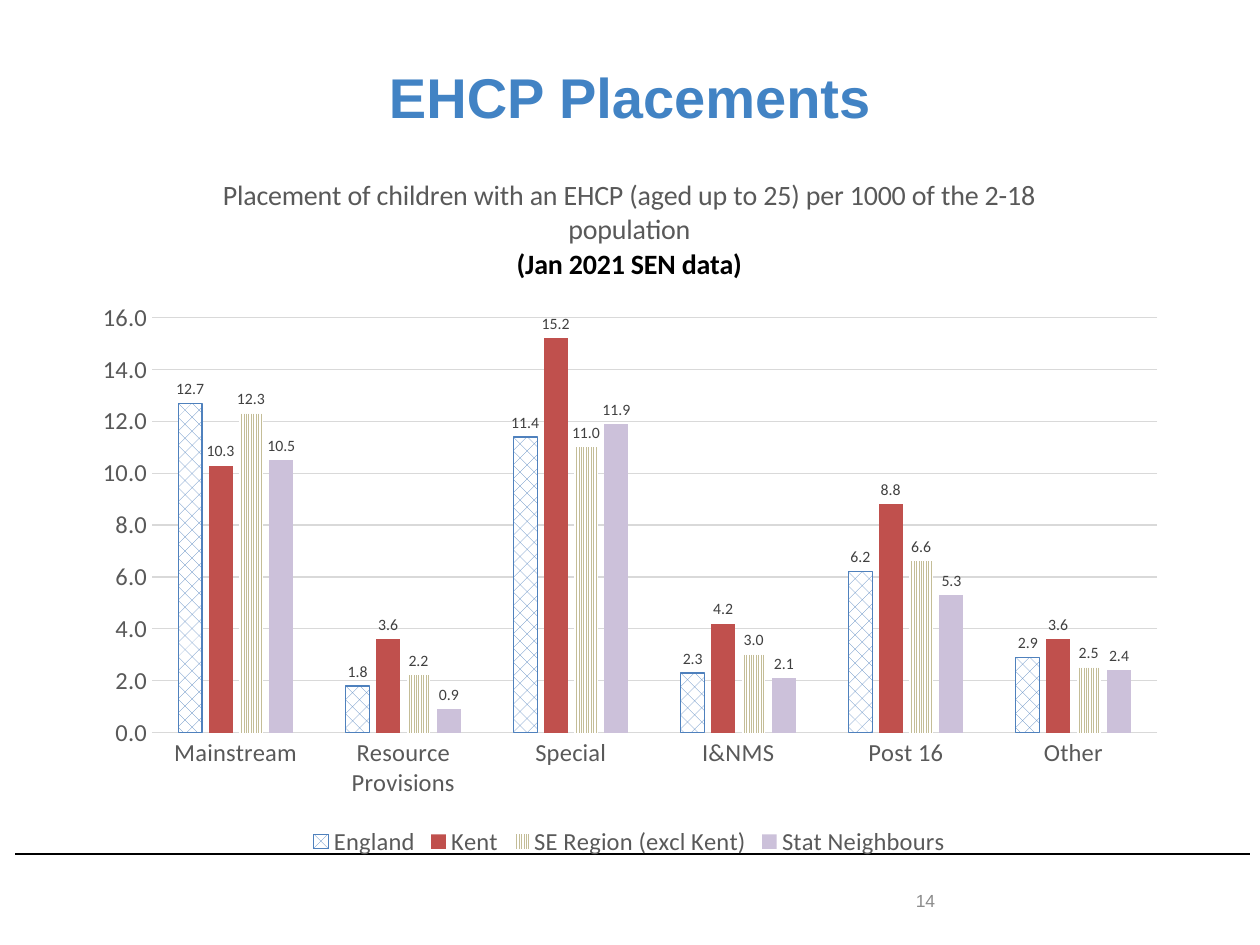
"""Build the EHCP placements slide with its clustered column chart."""
from lxml import etree
from pptx import Presentation
from pptx.chart.data import CategoryChartData
from pptx.dml.color import RGBColor
from pptx.enum.chart import XL_CHART_TYPE, XL_LABEL_POSITION, XL_LEGEND_POSITION, XL_TICK_MARK
from pptx.enum.dml import MSO_PATTERN
from pptx.enum.shapes import MSO_CONNECTOR
from pptx.enum.text import MSO_ANCHOR, PP_ALIGN
from pptx.oxml import parse_xml
from pptx.oxml.ns import nsdecls, qn
from pptx.util import Inches, Pt

COLUMNS = XL_CHART_TYPE.COLUMN_CLUSTERED
OUTSIDE_END = XL_LABEL_POSITION.OUTSIDE_END
BOTTOM = XL_LEGEND_POSITION.BOTTOM
NO_TICK = XL_TICK_MARK.NONE
CROSSED = MSO_PATTERN.PERCENT_25
STRIPED = MSO_PATTERN.LIGHT_VERTICAL
STRAIGHT = MSO_CONNECTOR.STRAIGHT
MIDDLE = MSO_ANCHOR.MIDDLE
CENTER = PP_ALIGN.CENTER

COLORS = {
    "title": "4283C4", "number": "8C8C8C", "black": "000000", "white": "FFFFFF",
    "text": "595959", "label": "404040", "grid": "D9D9D9",
    "England": "4F81BD", "Kent": "C0504D",
    "SE Region (excl Kent)": "C4BD97", "Stat Neighbours": "CCC1DA",
}
CATEGORIES = ["Mainstream", "Resource Provisions", "Special", "I&NMS", "Post 16", "Other"]
PLACEMENTS = {
    "England": [12.7, 1.8, 11.4, 2.3, 6.2, 2.9],
    "Kent": [10.3, 3.6, 15.2, 4.2, 8.8, 3.6],
    "SE Region (excl Kent)": [12.3, 2.2, 11.0, 3.0, 6.6, 2.5],
    "Stat Neighbours": [10.5, 0.9, 11.9, 2.1, 5.3, 2.4],
}
PATTERNS = {"England": CROSSED, "SE Region (excl Kent)": STRIPED}
PLOT_AREA = {"x": 0.065, "y": 0.233, "w": 0.916, "h": 0.585}
NUMBER_FORMAT = "#,##0.0"


def color(name):
    return RGBColor.from_string(COLORS[name])


def set_font(font, size, color_name, name="Calibri", bold=False):
    font.size = Pt(size)
    font.name = name
    font.bold = bold
    font.color.rgb = color(color_name)


deck = Presentation()
deck.slide_width, deck.slide_height = Inches(10), Inches(7.5)
page = deck.slides.add_slide(deck.slide_layouts[5])

title = page.shapes.title
title.left, title.top, title.width, title.height = Inches(0.5), Inches(0.3), Inches(9), Inches(0.93)
title.text_frame.text = "EHCP Placements"
title.text_frame.vertical_anchor = MIDDLE
heading = title.text_frame.paragraphs[0]
heading.alignment = CENTER
set_font(heading.font, 32, "title", "Arial", True)

rule = page.shapes.add_connector(STRAIGHT, Inches(0.12), Inches(6.78), Inches(9.92), Inches(6.78))
rule.line.color.rgb = color("black")
rule.line.width = Pt(1)
etree.SubElement(rule._element.spPr, qn("a:effectLst"))

number = page.shapes.add_textbox(Inches(7.17), Inches(6.95), Inches(2.33), Inches(0.4))
number.text_frame.word_wrap = True
number.text_frame.vertical_anchor = MIDDLE
number.text_frame.text = "14"
set_font(number.text_frame.paragraphs[0].font, 10, "number", "Arial")

data = CategoryChartData(number_format=NUMBER_FORMAT)
data.categories = CATEGORIES
for name, values in PLACEMENTS.items():
    data.add_series(name, values)
chart = page.shapes.add_chart(
    COLUMNS, Inches(0.64), Inches(1.21), Inches(8.71), Inches(5.63), data
).chart
set_font(chart.font, 10, "black")

caption = chart.chart_title.text_frame
caption.text = "Placement of children with an EHCP (aged up to 25) per 1000 of the 2-18 population"
set_font(caption.paragraphs[0].font, 16, "text")
source = caption.add_paragraph()
source.text = "(Jan 2021 SEN data)"
set_font(source.font, 16, "black", bold=True)
chart.chart_title.include_in_layout = False

chart.has_legend = True
chart.legend.position = BOTTOM
chart.legend.include_in_layout = False
set_font(chart.legend.font, 14, "text")

for axis in (chart.category_axis, chart.value_axis):
    axis.major_tick_mark = axis.minor_tick_mark = NO_TICK
    set_font(axis.tick_labels.font, 14, "text")
chart.category_axis.format.line.color.rgb = color("grid")
chart.category_axis.format.line.width = Pt(0.75)
chart.value_axis.minimum_scale = 0
chart.value_axis.maximum_scale = 16
chart.value_axis.major_unit = 2
chart.value_axis.format.line.fill.background()
chart.value_axis.tick_labels.number_format = NUMBER_FORMAT
chart.value_axis.tick_labels.number_format_is_linked = False
gridline = chart.value_axis.major_gridlines.format.line
gridline.color.rgb = color("grid")
gridline.width = Pt(0.75)

plot = chart.plots[0]
plot.gap_width = 219
plot.overlap = -27
plot.vary_by_categories = False
for series in plot.series:
    fill = series.format.fill
    if series.name in PATTERNS:
        fill.patterned()
        fill.pattern = PATTERNS[series.name]
        fill.fore_color.rgb = color(series.name)
        fill.back_color.rgb = color("white")
    else:
        fill.solid()
        fill.fore_color.rgb = color(series.name)
    if series.name == "England":
        series.format.line.color.rgb = color(series.name)
        series.format.line.width = Pt(0.75)
    else:
        series.format.line.fill.background()
    labels = series.data_labels
    labels.show_value = True
    labels.position = OUTSIDE_END
    labels.number_format = NUMBER_FORMAT
    labels.number_format_is_linked = False
    set_font(labels.font, 9, "label")

sizes = "".join(f'<c:{key} val="{value}"/>' for key, value in PLOT_AREA.items())
layout = parse_xml(
    f'<c:layout {nsdecls("c")}><c:manualLayout><c:layoutTarget val="inner"/>'
    f'<c:xMode val="edge"/><c:yMode val="edge"/>{sizes}</c:manualLayout></c:layout>'
)
plot_area = chart._chartSpace.chart.plotArea
for automatic in plot_area.findall(qn("c:layout")):
    plot_area.remove(automatic)
plot_area.insert(0, layout)

deck.save("out.pptx")
